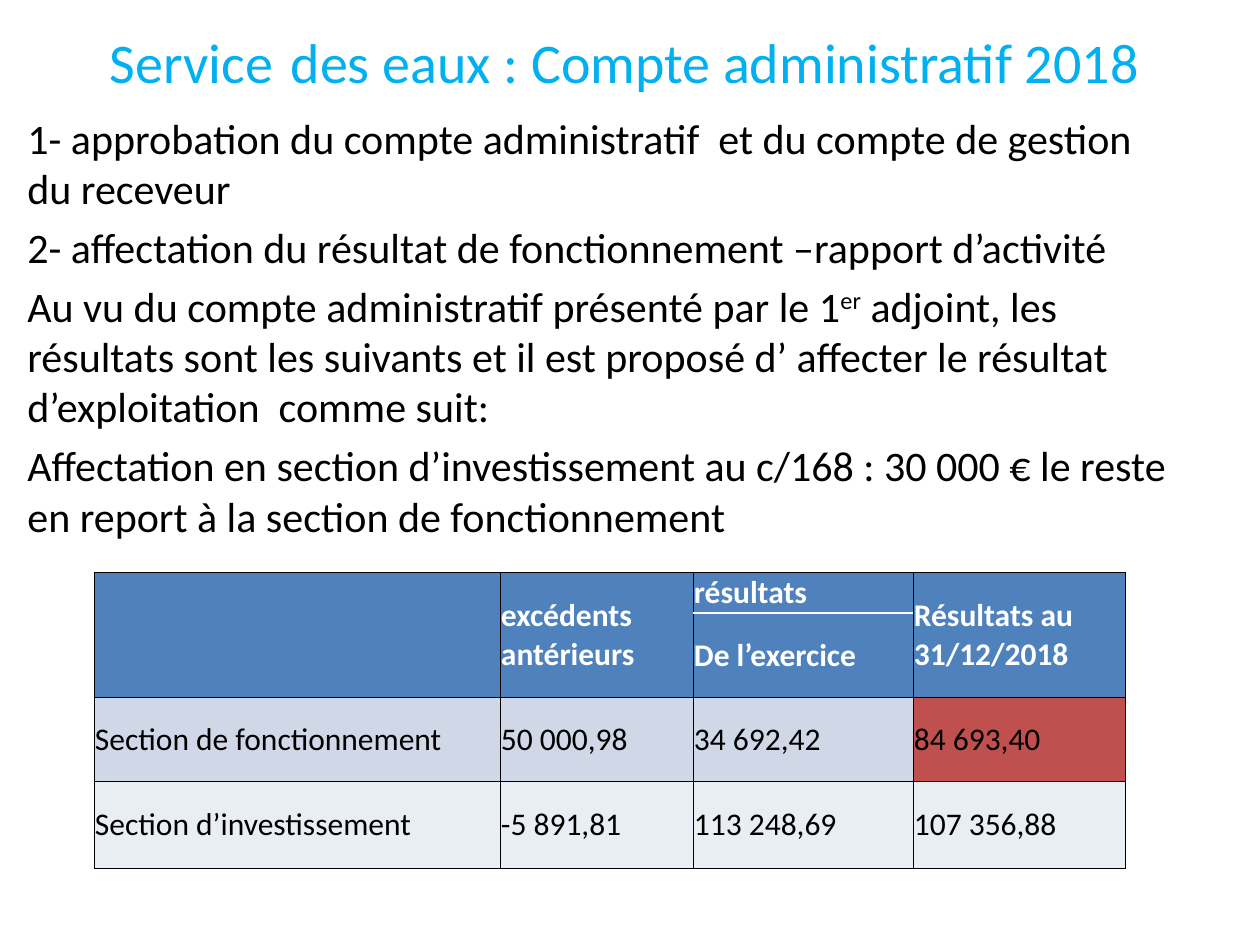
from dataclasses import dataclass

from lxml import etree
from pptx import Presentation
from pptx import util as u
from pptx.dml.color import RGBColor
from pptx.enum import text
from pptx.oxml import ns

PX = 914400 // 126  # EMU per px
FONT = "Calibri"
BLACK, WHITE, SKY = "000000", "FFFFFF", "00B0F0"
BLUE, LIGHT, PALE, RED = "4F81BD", "D0D8E8", "E9EDF4", "C0504D"


@dataclass
class Box:
    x: int
    y: int
    w: int
    h: int

    def emu(self) -> list[int]:
        return [v * PX for v in (self.x, self.y, self.w, self.h)]


@dataclass
class Cell:
    row: int
    col: int
    text: str
    fill: str = BLUE
    color: str = WHITE
    bold: bool = True
    rows: int = 1
    sides: str = "LRTB"


def rgb(value: str) -> RGBColor:
    return RGBColor.from_string(value)


def add_run(p, content: str, size: int = 24, color: str = BLACK,
            bold: bool = False, raised: bool = False) -> None:
    r = p.add_run()
    r.text = content
    r.font.name, r.font.size, r.font.bold = FONT, u.Pt(size), bold
    r.font.color.rgb = rgb(color)
    if raised:
        r._r.get_or_add_rPr().set("baseline", "30000")


def add_box(slide, box: Box):
    tf = slide.shapes.add_textbox(*box.emu()).text_frame
    tf.word_wrap = True
    return tf


def add_border(cell, side: str) -> None:
    tc_pr = cell._tc.get_or_add_tcPr()
    ln = etree.SubElement(tc_pr, ns.qn(f"a:ln{side}"), w=str(u.Pt(0.5)))
    fill = etree.SubElement(ln, ns.qn("a:solidFill"))
    etree.SubElement(fill, ns.qn("a:srgbClr"), val=BLACK)


def fill_cell(table, item: Cell) -> None:
    cell = table.cell(item.row, item.col)
    last = table.cell(item.row + item.rows - 1, item.col)
    if item.rows > 1:
        cell.merge(last)
    for i in range(item.rows):
        part = table.cell(item.row + i, item.col)
        for side in "LRTB":
            if side in item.sides:
                add_border(part, side)
        part.fill.solid()
        part.fill.fore_color.rgb = rgb(item.fill)
    cell.margin_left = cell.margin_right = cell.margin_top = PX
    cell.margin_bottom = 0
    cell.vertical_anchor = text.MSO_ANCHOR.MIDDLE
    if item.text:
        add_run(cell.text_frame.paragraphs[0], item.text, 18, item.color, item.bold)


def add_table(slide, box: Box, cols: list[int], rows: list[int], cells: list[Cell]) -> None:
    table = slide.shapes.add_table(len(rows), len(cols), *box.emu()).table
    for column, width in zip(table.columns, cols):
        column.width = width * PX
    for row, height in zip(table.rows, rows):
        row.height = height * PX
    for item in cells:
        fill_cell(table, item)


def main() -> None:
    prs = Presentation()
    prs.slide_width, prs.slide_height = u.Inches(10), u.Inches(7.5)
    s = prs.slides.add_slide(prs.slide_layouts[6])

    # Title
    tf = add_box(s, Box(64, 0, 1134, 106))
    tf.vertical_anchor = text.MSO_ANCHOR.MIDDLE
    p = tf.paragraphs[0]
    p.alignment = text.PP_ALIGN.CENTER
    add_run(p, "Service", 32, SKY)
    add_run(p, " ", 44, SKY)
    add_run(p, "des eaux : Compte administratif 2018 ", 32, SKY)

    # Decisions; every second piece of a paragraph is superscript
    paragraphs = [
        ["1- approbation du compte administratif  et du compte de gestion du receveur"],
        ["2- affectation du résultat de fonctionnement –rapport d’activité"],
        ["Au vu du compte administratif présenté par le 1", "er",
         " adjoint, les résultats sont les suivants et il est proposé d’ affecter "
         "le résultat d’exploitation  comme suit:"],
        ["Affectation en section d’investissement au c/168 : 30 000 € le reste "
         "en report à la section de fonctionnement"],
    ]
    tf = add_box(s, Box(15, 106, 1182, 824))
    for i, pieces in enumerate(paragraphs):
        p = tf.add_paragraph() if i else tf.paragraphs[0]
        p.space_before = u.Pt(4.8)
        for j, piece in enumerate(pieces):
            add_run(p, piece, raised=j % 2 == 1)

    # Results table
    cells = [
        Cell(0, 0, "", rows=2),
        Cell(0, 1, "excédents antérieurs", rows=2),
        Cell(0, 2, "résultats", sides="LRT"),
        Cell(1, 2, "De l’exercice", sides="LRB"),
        Cell(0, 3, "Résultats au 31/12/2018", rows=2),
    ]
    sections = [
        (LIGHT, ["Section de fonctionnement", "50 000,98", "34 692,42", "84 693,40"]),
        (PALE, ["Section d’investissement", "-5 891,81", "113 248,69", "107 356,88"]),
    ]
    for row, (fill, values) in enumerate(sections, start=2):
        for col, value in enumerate(values):
            shade = RED if (row, col) == (2, 3) else fill
            cells.append(Cell(row, col, value, shade, BLACK, False))
    add_table(s, Box(94, 572, 1032, 296), [406, 193, 220, 213], [41, 84, 84, 87], cells)

    prs.save("out.pptx")


if __name__ == "__main__":
    main()
